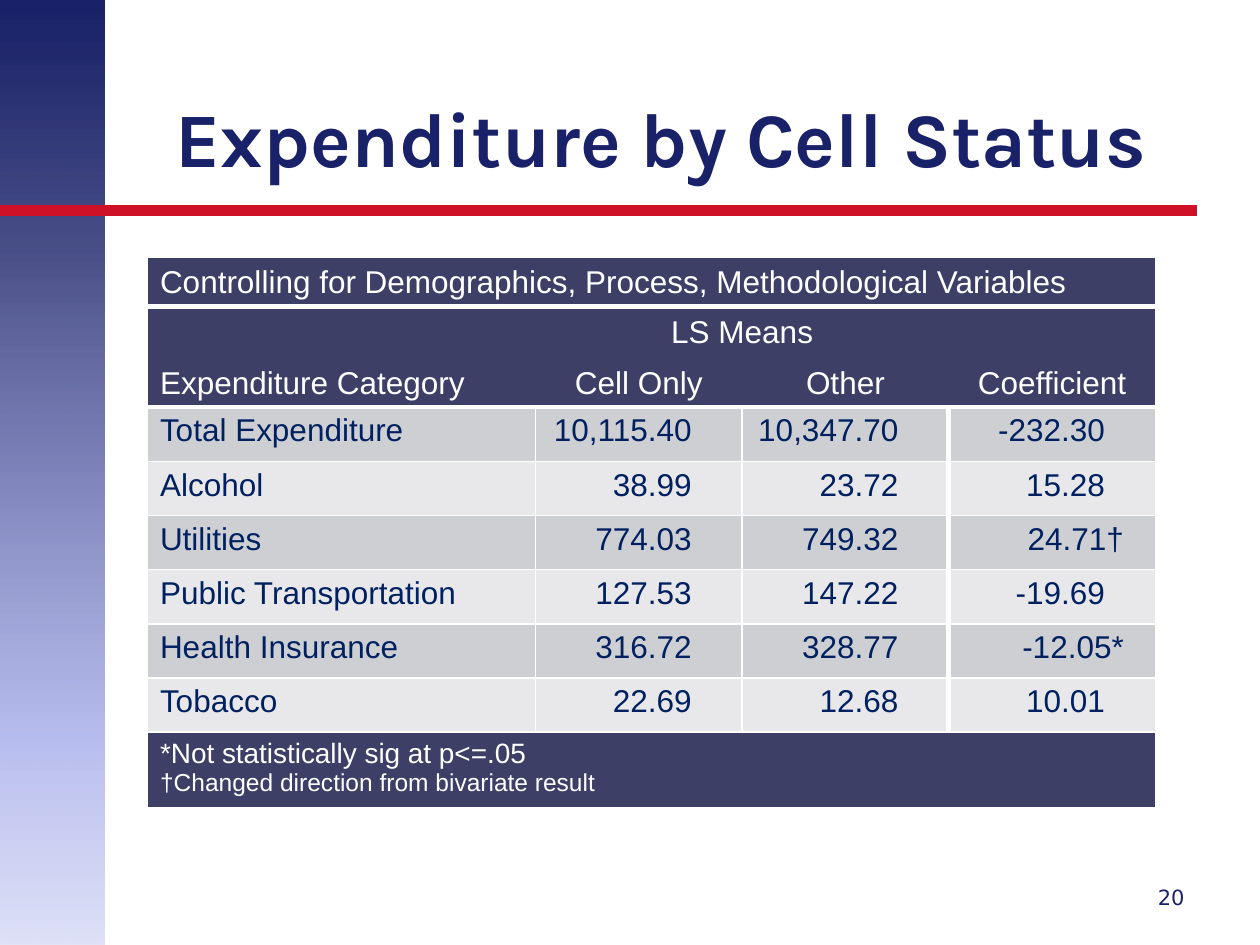
from typing import NamedTuple

import pptx
import pptx.dml.color
import pptx.enum.shapes
import pptx.enum.text
import pptx.oxml
import pptx.oxml.ns
import pptx.util
from lxml import etree
from pptx.dml.color import RGBColor
from pptx.util import Inches

NAVY = RGBColor(0x19, 0x21, 0x68)
RED = RGBColor(0xCE, 0x11, 0x26)
WHITE = RGBColor(0xFF, 0xFF, 0xFF)
HEADER = RGBColor(0x3E, 0x3F, 0x67)
DARK_BAND = RGBColor(0xCE, 0xCF, 0xD3)
LIGHT_BAND = RGBColor(0xE8, 0xE8, 0xEB)
INK = RGBColor(0x00, 0x20, 0x60)

ALIGN = pptx.enum.text.PP_ALIGN
ANCHOR = pptx.enum.text.MSO_ANCHOR
qn = pptx.oxml.ns.qn


class Stop(NamedTuple):
    position: int
    color: RGBColor
    opacity: int


class HeaderCell(NamedTuple):
    row: int
    col: int
    text: str
    align: ALIGN = ALIGN.CENTER
    rows: int = 1
    cols: int = 1


class Expense(NamedTuple):
    category: str
    cell_only: str
    other: str
    coefficient: str


SIDEBAR_STOPS = [
    Stop(0, NAVY, 100),
    Stop(26, NAVY, 79),
    Stop(78, RGBColor(0x96, 0x9E, 0xE6), 68),
    Stop(100, RGBColor(0xCA, 0xCE, 0xF2), 61),
]
HEADERS = [
    HeaderCell(0, 0, "Controlling for Demographics, Process, Methodological Variables",
               ALIGN.LEFT, cols=4),
    HeaderCell(1, 0, "Expenditure Category", ALIGN.LEFT, rows=2),
    HeaderCell(1, 1, "LS Means", cols=2),
    HeaderCell(1, 3, "Coefficient", rows=2),
    HeaderCell(2, 1, "Cell Only"),
    HeaderCell(2, 2, "Other"),
]
EXPENSES = [
    Expense("Total Expenditure", "10,115.40", "10,347.70", "-232.30"),
    Expense("Alcohol", "38.99", "23.72", "15.28"),
    Expense("Utilities", "774.03", "749.32", "24.71†"),
    Expense("Public Transportation", "127.53", "147.22", "-19.69"),
    Expense("Health Insurance", "316.72", "328.77", "-12.05*"),
    Expense("Tobacco", "22.69", "12.68", "10.01"),
]
FIRST_DATA_ROW = 3
FOOTER_ROW = FIRST_DATA_ROW + len(EXPENSES)
COL_WIDTHS = [3.08, 1.64, 1.64, 1.64]
ROW_HEIGHTS = [0.37] * FIRST_DATA_ROW + [0.43] * len(EXPENSES) + [0.55]


def write(tf, text: str, *, size: float = 18, font: str = "Arial", color: RGBColor = WHITE,
          bold: bool = False, align: ALIGN = ALIGN.LEFT, new: bool = False) -> None:
    """Fill the first paragraph of a text frame, or a new one."""
    p = tf.add_paragraph() if new else tf.paragraphs[0]
    p.alignment = align
    r = p.add_run()
    r.text = text
    r.font.size = pptx.util.Pt(size)
    r.font.name = font
    r.font.bold = bold
    r.font.color.rgb = color


def add_text(s, left: float, top: float, width: float, height: float, text: str,
             anchor: ANCHOR, **fmt) -> None:
    tf = s.shapes.add_textbox(*map(Inches, (left, top, width, height))).text_frame
    tf.word_wrap = True
    tf.vertical_anchor = anchor
    write(tf, text, **fmt)


def add_sidebar(s) -> None:
    sp = s.shapes.add_shape(pptx.enum.shapes.MSO_SHAPE.RECTANGLE, 0, 0, Inches(0.83), Inches(7.5))
    sp.shadow.inherit = False
    sp.line.fill.background()
    sp.fill.gradient()
    grad = sp.fill._xPr.find(qn("a:gradFill"))
    stops = grad.find(qn("a:gsLst"))
    for old in list(stops):
        stops.remove(old)
    for stop in SIDEBAR_STOPS:
        gs = etree.SubElement(stops, qn("a:gs"), pos=str(stop.position * 1000))
        clr = etree.SubElement(gs, qn("a:srgbClr"), val=str(stop.color))
        etree.SubElement(clr, qn("a:alpha"), val=str(stop.opacity * 1000))
    grad.find(qn("a:lin")).set("ang", str(90 * 60000))


def add_rule(s) -> None:
    line = s.shapes.add_connector(pptx.enum.shapes.MSO_CONNECTOR.STRAIGHT,
                                  0, Inches(1.67), Inches(9.5), Inches(1.67))
    line.line.color.rgb = RED
    line.line.width = pptx.util.Pt(6)
    etree.SubElement(line._element.spPr, qn("a:effectLst"))


def row_edge(i: int) -> int:
    """Width in points of the horizontal border above row i."""
    return {0: 3, 1: 3, 2: 0, FIRST_DATA_ROW: 3}.get(i, 1)


def col_edge(row: int, j: int) -> int:
    """Width in points of the vertical border left of column j."""
    if j in (0, len(COL_WIDTHS)):
        return 1
    if row < FIRST_DATA_ROW:
        return 0
    return 3 if j == 3 else 1


def style_cell(cell, row: int, col: int, fill: RGBColor) -> None:
    rows, cols = (cell.span_height, cell.span_width) if cell.is_merge_origin else (1, 1)
    edges = {"L": col_edge(row, col), "R": col_edge(row, col + cols),
             "T": row_edge(row), "B": row_edge(row + rows)}
    tcPr = cell._tc.get_or_add_tcPr()
    for side, points in edges.items():
        ln = etree.SubElement(tcPr, qn(f"a:ln{side}"), w=str(pptx.util.Pt(points)))
        if points:
            solid = etree.SubElement(ln, qn("a:solidFill"))
            etree.SubElement(solid, qn("a:srgbClr"), val=str(WHITE))
        else:
            etree.SubElement(ln, qn("a:noFill"))
    cell.fill.solid()
    cell.fill.fore_color.rgb = fill


def band(row: int) -> RGBColor:
    if row < FIRST_DATA_ROW or row == FOOTER_ROW:
        return HEADER
    return LIGHT_BAND if (row - FIRST_DATA_ROW) % 2 else DARK_BAND


def add_expenditure_table(s) -> None:
    frame = s.shapes.add_table(len(ROW_HEIGHTS), len(COL_WIDTHS), Inches(1.17), Inches(2.03),
                               Inches(sum(COL_WIDTHS)), Inches(sum(ROW_HEIGHTS)))
    table = frame.table
    for column, width in zip(table.columns, COL_WIDTHS):
        column.width = Inches(width)
    for row, height in zip(table.rows, ROW_HEIGHTS):
        row.height = Inches(height)

    for h in HEADERS:
        cell = table.cell(h.row, h.col)
        if h.rows * h.cols > 1:
            cell.merge(table.cell(h.row + h.rows - 1, h.col + h.cols - 1))
        cell.vertical_anchor = ANCHOR.BOTTOM
        write(cell.text_frame, h.text, align=h.align)

    for i, expense in enumerate(EXPENSES, FIRST_DATA_ROW):
        write(table.cell(i, 0).text_frame, expense.category, color=INK)
        for j, value in enumerate(expense[1:], 1):
            cell = table.cell(i, j)
            cell.margin_left = 0
            cell.margin_right = Inches(0.25 if value[-1] in "†*" else 0.4)
            write(cell.text_frame, value, color=INK, align=ALIGN.RIGHT)

    footer = table.cell(FOOTER_ROW, 0)
    footer.merge(table.cell(FOOTER_ROW, len(COL_WIDTHS) - 1))
    write(footer.text_frame, "*Not statistically sig at p<=.05", size=16)
    write(footer.text_frame, "†Changed direction from bivariate result", size=14, new=True)

    for i in range(len(ROW_HEIGHTS)):
        for j in range(len(COL_WIDTHS)):
            style_cell(table.cell(i, j), i, j, band(i))


def main() -> None:
    prs = pptx.Presentation()
    prs.slide_width, prs.slide_height = Inches(10), Inches(7.5)
    s = prs.slides.add_slide(prs.slide_layouts[6])
    add_sidebar(s)
    add_rule(s)
    add_text(s, 1, 0.3, 8.5, 1.2, "Expenditure by Cell Status", ANCHOR.BOTTOM,
             size=44, font="Karla", color=NAVY, bold=True, align=ALIGN.CENTER)
    add_text(s, 8.75, 6.92, 0.75, 0.4, "20", ANCHOR.MIDDLE,
             size=12, font="DejaVu Sans", color=NAVY, align=ALIGN.RIGHT)
    add_expenditure_table(s)
    prs.save("out.pptx")


if __name__ == "__main__":
    main()
